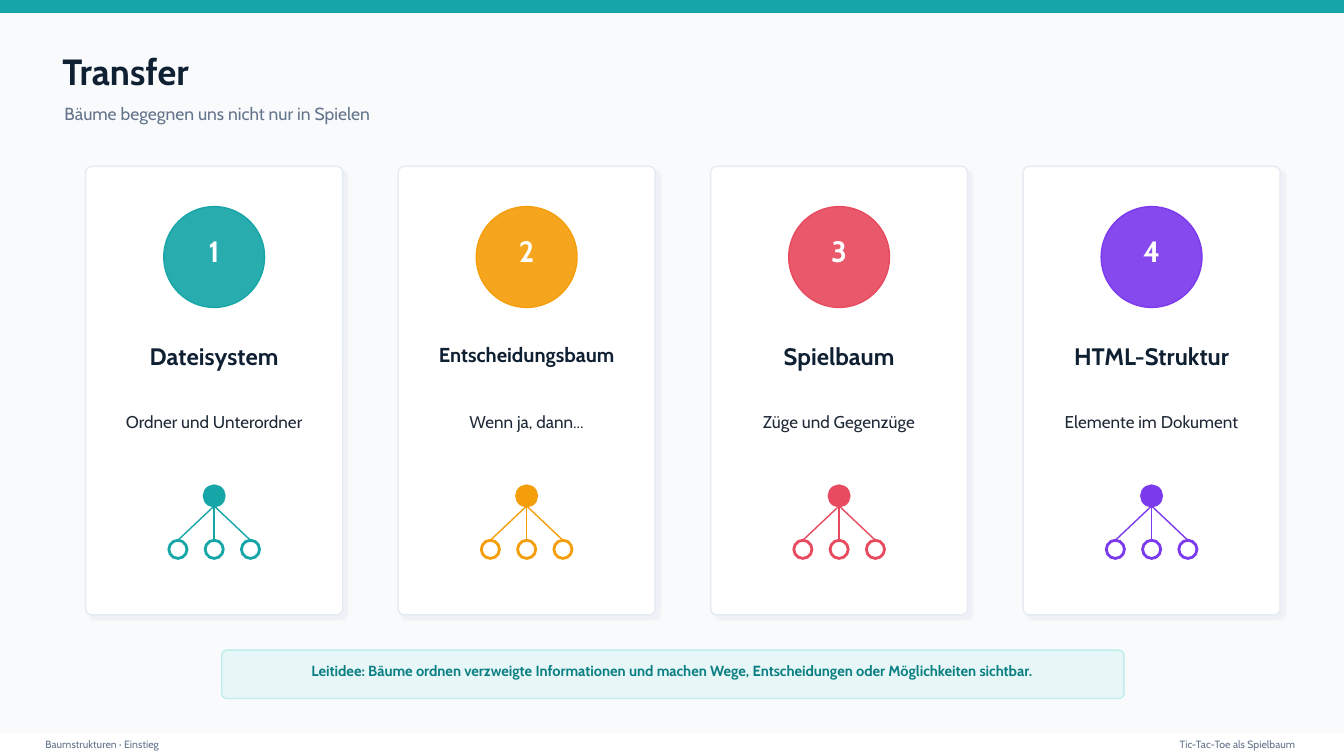
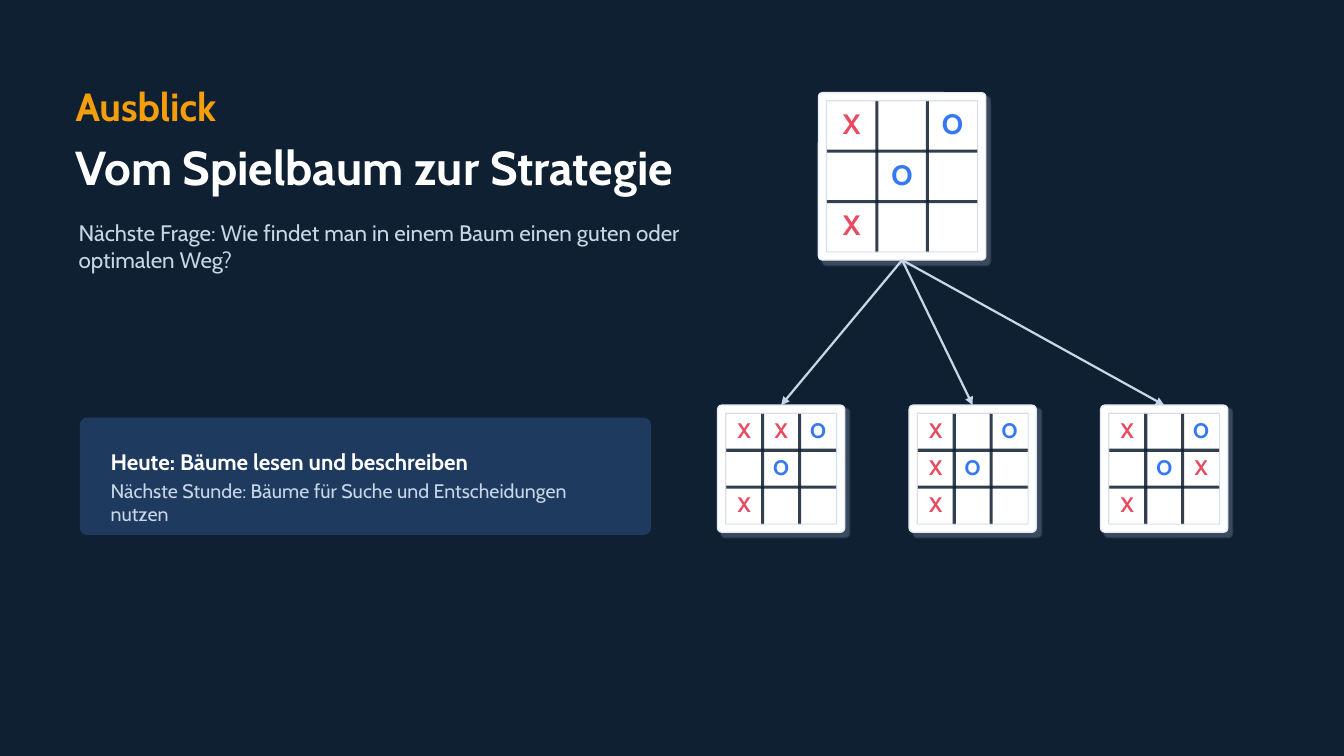
"""Build two slides on tree structures: transfer and outlook."""
import dataclasses

import lxml.etree
import pptx
import pptx.dml.color
import pptx.enum.shapes
import pptx.enum.text
import pptx.oxml.ns
import pptx.util

Pt = pptx.util.Pt
SHAPE = pptx.enum.shapes.MSO_SHAPE
ALIGN = pptx.enum.text.PP_ALIGN
ANCHOR = pptx.enum.text.MSO_ANCHOR


@dataclasses.dataclass(frozen=True)
class Theme:
    font: str = "Cabin"
    width: float = 960
    height: float = 540
    paper: str = "F8FAFC"
    white: str = "FFFFFF"
    ink: str = "102033"
    teal: str = "16A6A8"
    amber: str = "F59E0B"
    red: str = "E84A5F"
    violet: str = "7C3AED"
    blue: str = "3478F6"
    pale: str = "C8D7E8"
    panel: str = "1E3A5F"
    mint: str = "E7F7F7"
    mint_edge: str = "BFECEC"
    card_edge: str = "E6EBF2"
    card_shadow: tuple = ("CBD5E1", 22)
    board_edge: str = "E7EDF6"
    board_shadow: tuple = ("B8C5D6", 25)
    grid_edge: str = "CBD5E1"
    footer: tuple = (7.5, "64748B", False)
    title: tuple = (26, "102033", True)
    subtitle: tuple = (12.5, "64748B", False)
    number: tuple = (21, "FFFFFF", True)
    card_title: tuple = (17, "102033", True)
    card_title_long: tuple = (14.4, "102033", True)
    card_text: tuple = (12.2, "1F2937", False)
    callout: tuple = (10.5, "0B7F83", True)
    kicker: tuple = (28, "F59E0B", True)
    headline: tuple = (34, "FFFFFF", True)
    question: tuple = (16, "C8D7E8", False)
    today: tuple = (16, "FFFFFF", True)
    next_time: tuple = (14, "C8D7E8", False)


def rgb(value):
    return pptx.dml.color.RGBColor.from_string(value)


def add_tag(parent, tag, **attributes):
    values = {name: str(value) for name, value in attributes.items()}
    return lxml.etree.SubElement(parent, pptx.oxml.ns.qn(tag), values)


def find_tag(parent, *tags):
    return parent.find("/".join(pptx.oxml.ns.qn(tag) for tag in tags))


def set_alpha(parent, percent):
    color = find_tag(parent, "a:solidFill", "a:srgbClr")
    add_tag(color, "a:alpha", val=percent * 1000)


class Deck:
    def __init__(self, theme):
        self.theme = theme
        self.prs = pptx.Presentation()
        self.prs.slide_width = Pt(theme.width)
        self.prs.slide_height = Pt(theme.height)
        self.s = None

    def slide(self, background):
        self.s = self.prs.slides.add_slide(self.prs.slide_layouts[6])
        self.s.background.fill.solid()
        self.s.background.fill.fore_color.rgb = rgb(background)

    def shape(self, kind, x, y, w, h, fill, line, width=1, radius=None, shadow=None):
        sp = self.s.shapes.add_shape(kind, Pt(x), Pt(y), Pt(w), Pt(h))
        if radius:
            sp.adjustments[0] = radius / min(w, h)
        if fill:
            sp.fill.solid()
            sp.fill.fore_color.rgb = rgb(fill)
        else:
            sp.fill.background()
        sp.line.color.rgb = rgb(line)
        sp.line.width = Pt(width)
        sp.shadow.inherit = False
        if shadow:
            color, percent = shadow
            effects = find_tag(sp._element.spPr, "a:effectLst")
            outer = add_tag(effects, "a:outerShdw", blurRad=Pt(1), dist=Pt(4),
                            dir=45 * 60000, algn="tl", rotWithShape=0)
            tint = add_tag(outer, "a:srgbClr", val=color)
            add_tag(tint, "a:alpha", val=percent * 1000)
        return sp

    def fill_text(self, sp, items, align=ALIGN.LEFT, anchor=ANCHOR.MIDDLE,
                  insets=(0, 0, 0, 0), gap=0, spacing=None):
        tf = sp.text_frame
        tf.word_wrap = True
        tf.vertical_anchor = anchor
        tf.margin_left, tf.margin_top, tf.margin_right, tf.margin_bottom = map(Pt, insets)
        for i, (text, (size, color, bold)) in enumerate(items):
            p = tf.add_paragraph() if i else tf.paragraphs[0]
            p.alignment = align
            if i:
                p.space_before = Pt(gap)
            if spacing:
                p.line_spacing = spacing
            p.font.name = self.theme.font
            p.font.size = Pt(size)
            p.font.bold = bold
            p.font.color.rgb = rgb(color)
            p.add_run().text = text

    def text(self, x, y, w, h, text, style, align=ALIGN.LEFT, spacing=None):
        sp = self.s.shapes.add_textbox(Pt(x), Pt(y), Pt(w), Pt(h))
        self.fill_text(sp, [(text, style)], align, spacing=spacing)

    def line(self, x1, y1, x2, y2, color, width=1, alpha=None, arrow=False):
        c = self.s.shapes.add_connector(pptx.enum.shapes.MSO_CONNECTOR.STRAIGHT,
                                        Pt(x1), Pt(y1), Pt(x2), Pt(y2))
        c.line.color.rgb = rgb(color)
        c.line.width = Pt(width)
        ln = find_tag(c._element.spPr, "a:ln")
        if alpha:
            set_alpha(ln, alpha)
        if arrow:
            add_tag(ln, "a:tailEnd", type="triangle")
        add_tag(c._element.spPr, "a:effectLst")
        return c

    def frame(self, title, subtitle, left, right):
        t = self.theme
        self.shape(SHAPE.RECTANGLE, 0, 0, t.width, 8.64, t.teal, t.teal)
        self.shape(SHAPE.RECTANGLE, 0, 524.16, t.width, 15.84, t.white, t.white)
        self.text(32.4, 526.32, 302.4, 10.08, left, t.footer)
        self.text(655.2, 526.32, 270, 10.08, right, t.footer, ALIGN.RIGHT)
        self.text(44.64, 32.4, 612, 36, title, t.title)
        self.text(46.08, 70.56, 648, 21.6, subtitle, t.subtitle)

    def tree(self, cx, y, color):
        root, leaf, pitch, leaf_y = 14.4, 12.96, 25.92, y + 38.88
        centers = [cx + pitch * i for i in (-1, 0, 1)]
        self.shape(SHAPE.OVAL, cx - root / 2, y, root, root, color, color, 2)
        for x in centers:
            self.shape(SHAPE.OVAL, x - leaf / 2, leaf_y, leaf, leaf,
                       self.theme.white, color, 2)
        for x in centers:
            self.line(cx, y + root, x, leaf_y, color)

    def card(self, x, number, color, title, text):
        t = self.theme
        y, w, badge = 118.8, 183.6, 72
        cx = x + w / 2
        self.shape(SHAPE.ROUNDED_RECTANGLE, x, y, w, 320.4, t.white, t.card_edge,
                   radius=4.32, shadow=t.card_shadow)
        sp = self.shape(SHAPE.OVAL, cx - badge / 2, y + 28.8, badge, badge, color, color)
        set_alpha(sp._element.spPr, 92)
        self.fill_text(sp, [(str(number), t.number)], ALIGN.CENTER, insets=(0, 0, 0, 8.64))
        is_long = len(title) > 15
        self.text(cx - 72, 243.36, 144, 21.6, title,
                  t.card_title_long if is_long else t.card_title,
                  ALIGN.CENTER, 0.9 if is_long else None)
        self.text(cx - 70.2, 282.24, 140.4, 37.44, text, t.card_text, ALIGN.CENTER)
        self.tree(cx, 347.04, color)

    def board(self, x, y, cell, size, rows):
        t = self.theme
        side, margin = 3 * cell, 5.76
        outer = side + 2 * margin
        sp = self.shape(SHAPE.ROUNDED_RECTANGLE, x - margin, y - margin, outer, outer,
                        t.white, t.board_edge, radius=2.88, shadow=t.board_shadow)
        for d in (cell, 2 * cell):
            self.line(x + d, y, x + d, y + side, t.ink, 2.2, 85)
            self.line(x, y + d, x + side, y + d, t.ink, 2.2, 85)
        grid = self.shape(SHAPE.RECTANGLE, x, y, side, side, None, t.grid_edge, 0.8)
        set_alpha(find_tag(grid._element.spPr, "a:ln"), 75)
        for r, row in enumerate(rows):
            for c, mark in enumerate(row):
                if mark != ".":
                    color = t.red if mark == "X" else t.blue
                    self.text(x + c * cell, y + (r + 0.06) * cell, cell, 0.78 * cell,
                              mark, (size, color, True), ALIGN.CENTER)
        return sp

    def arrow(self, parent, child):
        c = self.line(0, 0, 0, 0, self.theme.pale, 1.6, arrow=True)
        c.begin_connect(parent, 2)
        c.end_connect(child, 0)


def transfer(deck):
    t = deck.theme
    deck.slide(t.paper)
    deck.frame("Transfer", "Bäume begegnen uns nicht nur in Spielen",
               "Baumstrukturen · Einstieg", "Tic-Tac-Toe als Spielbaum")
    cards = [
        (t.teal, "Dateisystem", "Ordner und Unterordner"),
        (t.amber, "Entscheidungsbaum", "Wenn ja, dann..."),
        (t.red, "Spielbaum", "Züge und Gegenzüge"),
        (t.violet, "HTML-Struktur", "Elemente im Dokument"),
    ]
    for i, card in enumerate(cards):
        deck.card(61.2 + 223.2 * i, i + 1, *card)
    sp = deck.shape(SHAPE.ROUNDED_RECTANGLE, 158.4, 464.4, 644.4, 34.56,
                    t.mint, t.mint_edge, radius=3.6)
    deck.fill_text(sp, [("Leitidee: Bäume ordnen verzweigte Informationen und machen Wege, "
                         "Entscheidungen oder Möglichkeiten sichtbar.", t.callout)],
                   ALIGN.CENTER, insets=(15.84, 0, 16.56, 2.88), spacing=0.8)


def outlook(deck):
    t = deck.theme
    deck.slide(t.ink)
    deck.text(54, 59.04, 216, 32.4, "Ausblick", t.kicker)
    deck.text(54, 97.2, 475.2, 43.2, "Vom Spielbaum zur Strategie", t.headline)
    deck.text(56.16, 161.28, 496.8, 28.8, "Nächste Frage: Wie findet man in einem Baum "
              "einen guten oder optimalen Weg?", t.question)
    parent = deck.board(590.4, 72, 36, 20, ("X.O", ".O.", "X.."))
    moves = [("XXO", ".O.", "X.."), ("X.O", "XO.", "X.."), ("X.O", ".OX", "X..")]
    children = [deck.board(518.4 + 136.8 * i, 295.2, 26.4, 15, rows)
                for i, rows in enumerate(moves)]
    for child in children:
        deck.arrow(parent, child)
    sp = deck.shape(SHAPE.ROUNDED_RECTANGLE, 57.6, 298.8, 406.8, 82.8,
                    t.panel, t.panel, radius=4.32)
    deck.fill_text(sp, [
        ("Heute: Bäume lesen und beschreiben", t.today),
        ("Nächste Stunde: Bäume für Suche und Entscheidungen nutzen", t.next_time),
    ], anchor=ANCHOR.TOP, insets=(20.16, 19.8, 19.44, 0), gap=2.8)


def main():
    deck = Deck(Theme())
    transfer(deck)
    outlook(deck)
    deck.prs.save("out.pptx")


if __name__ == "__main__":
    main()
